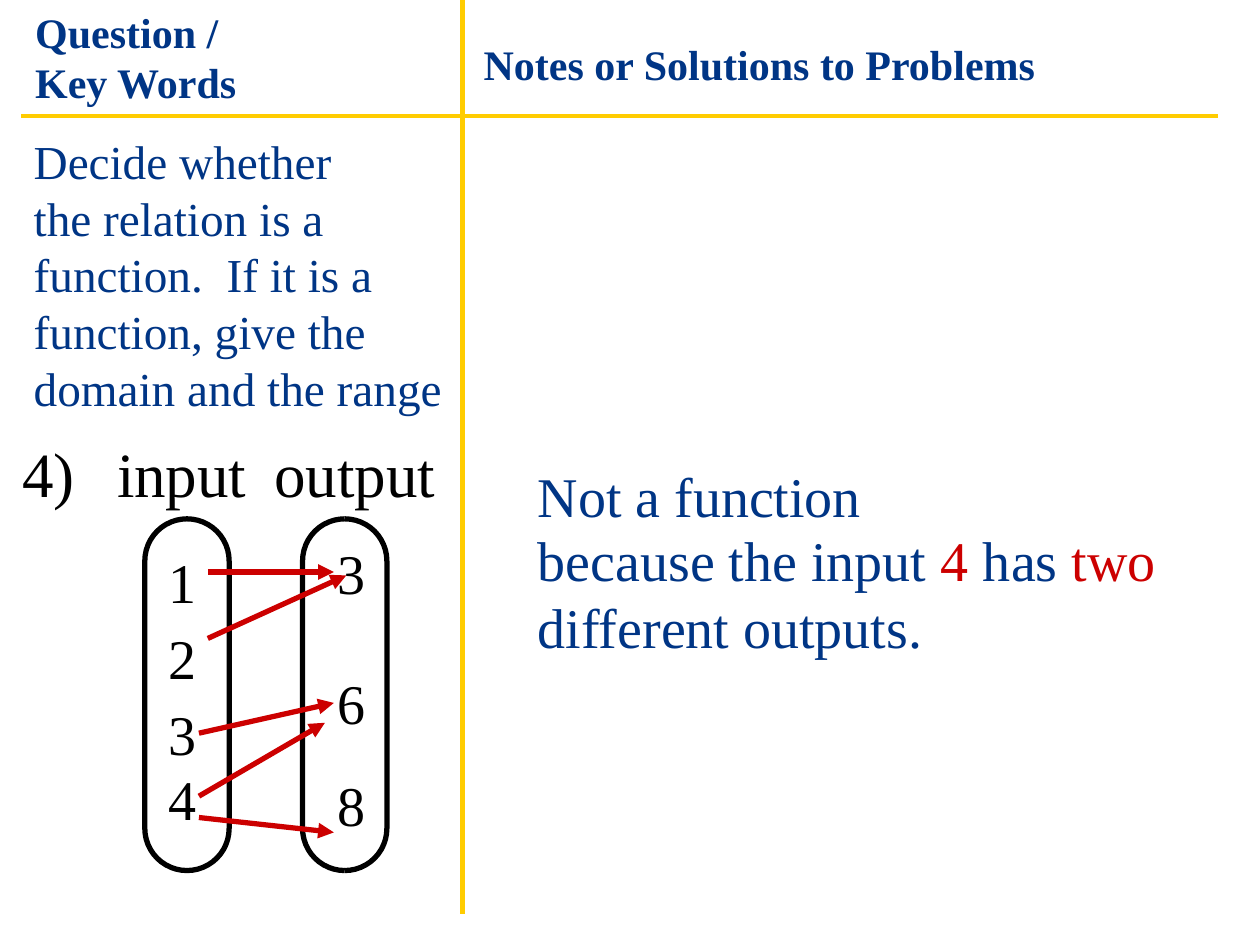
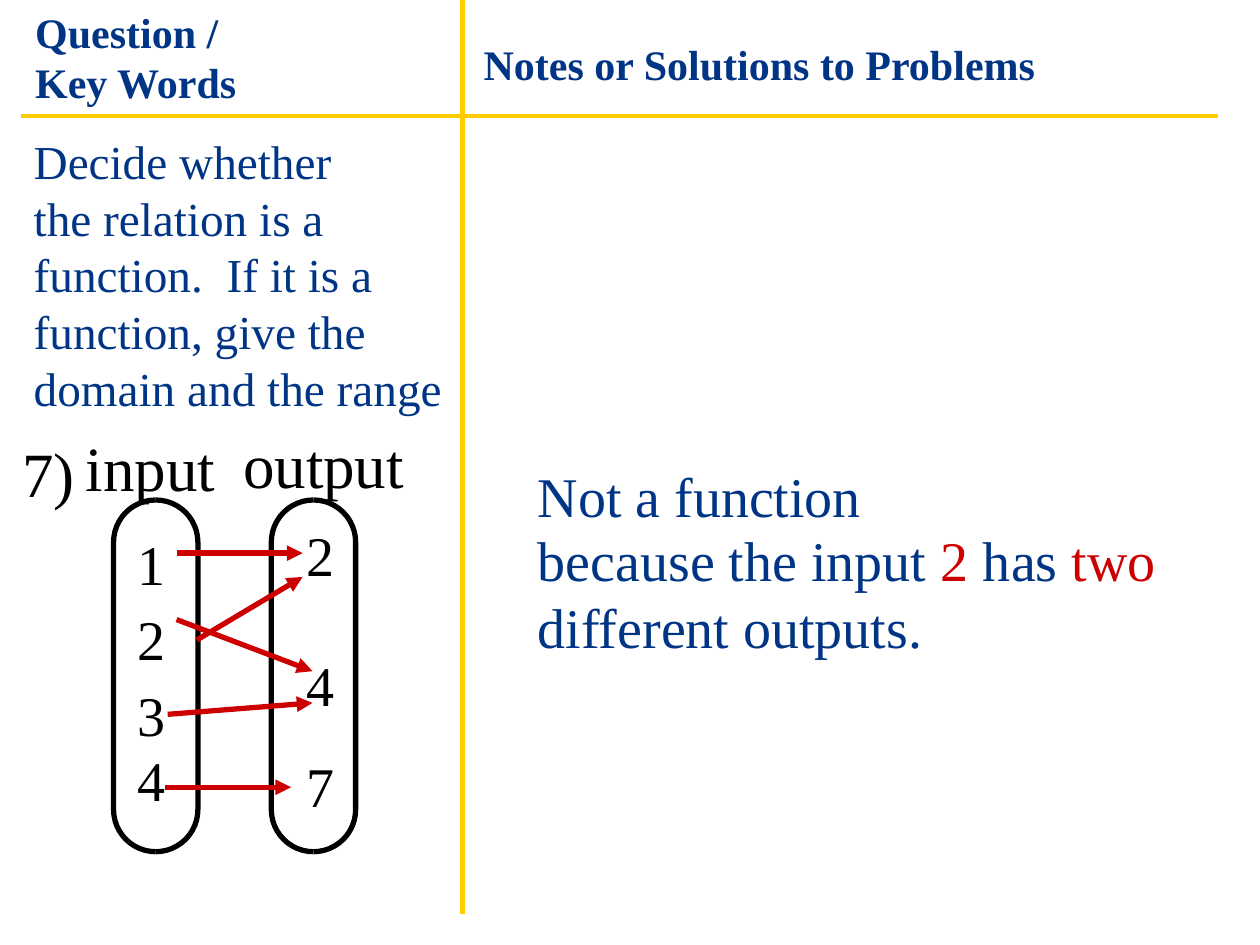
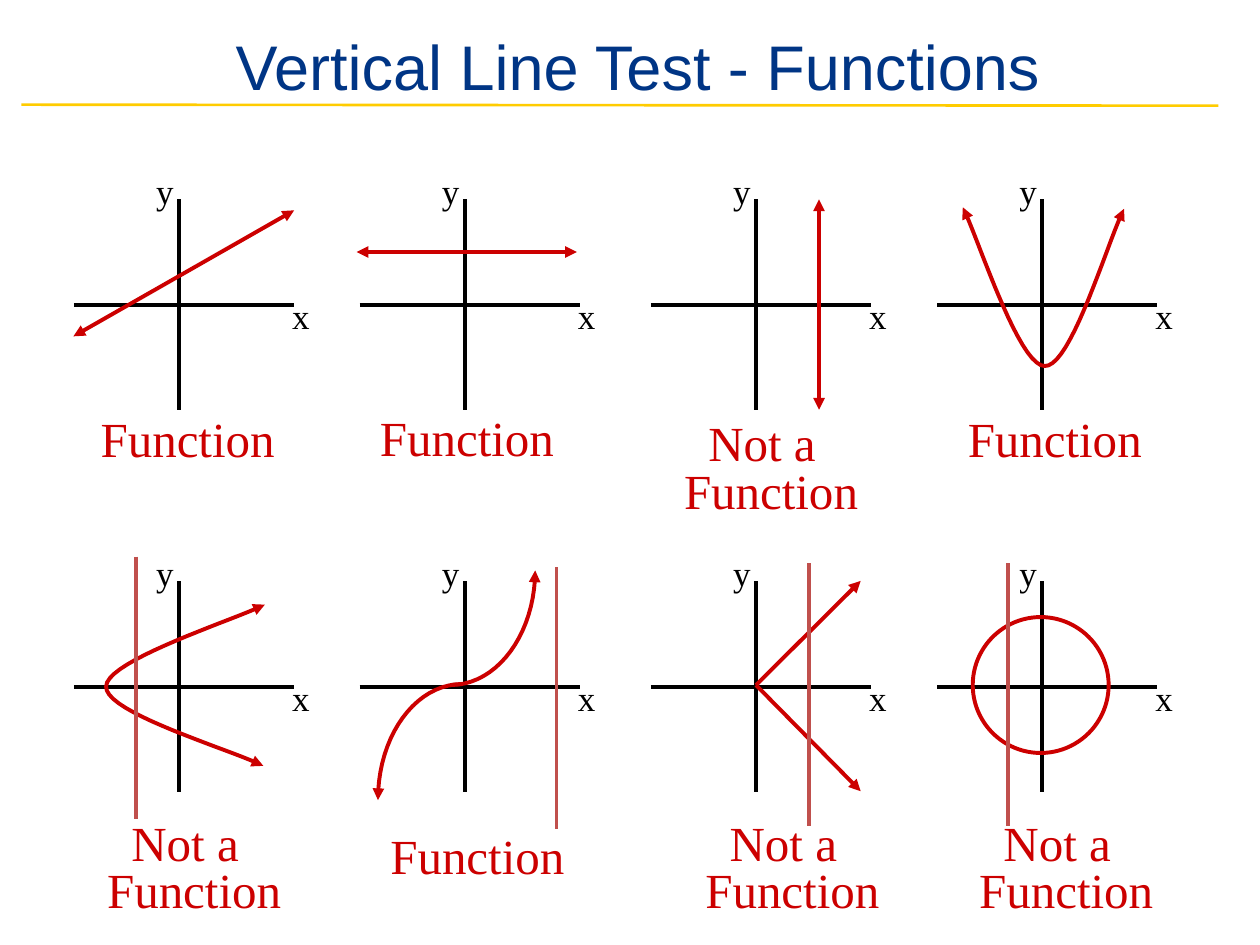
from lxml import etree
from pptx import Presentation
from pptx.dml.color import RGBColor
from pptx.enum.shapes import MSO_CONNECTOR, MSO_SHAPE
from pptx.enum.text import MSO_AUTO_SIZE
from pptx.oxml.ns import qn
from pptx.util import Cm, Pt

STRAIGHT = MSO_CONNECTOR.STRAIGHT
DOUBLE_BRACKET = MSO_SHAPE.DOUBLE_BRACKET
OVAL = MSO_SHAPE.OVAL
GROW = MSO_AUTO_SIZE.SHAPE_TO_FIT_TEXT

COLORS = {
    "navy": "003585",
    "gold": "FFCC00",
    "red": "CC0000",
    "brick": "C0504D",
    "black": "000000",
}
SERIF = "Times New Roman"
STYLES = {
    "heading": {"name": SERIF, "size": Pt(24), "bold": True},
    "question": {"name": SERIF, "size": Pt(27)},
    "label": {"name": SERIF, "size": Pt(36)},
    "answer": {"name": SERIF, "size": Pt(32)},
    "verdict": {"name": SERIF, "size": Pt(28)},
    "axis": {"name": SERIF, "size": Pt(20)},
    "title": {"name": "Arial", "size": Pt(36)},
}
QUESTION = [
    "Decide whether",
    "the relation is a",
    "function.  If it is a",
    "function, give the",
    "domain and the range",
]
INPUT_TOPS = [0.46, 1.98, 3.51, 4.83]
OUTPUT_TOPS = [0.28, 2.9, 4.95]
MAPPINGS = [
    {
        "number": "4)", "corner": (2.92, 10.46), "label_tops": (8.64, 8.64),
        "outputs": "368", "culprit": "4",
        "arrows": [
            (1.27, 1.07, 3.81, 1.07),
            (1.27, 2.41, 4.06, 1.14),
            (1.09, 4.32, 3.81, 3.71),
            (1.09, 5.59, 3.63, 4.11),
            (1.09, 6.02, 3.81, 6.32),
        ],
    },
    {
        "number": "7)", "corner": (2.29, 10.08), "label_tops": (8.51, 8.46),
        "outputs": "247", "culprit": "2",
        "arrows": [
            (1.27, 1.07, 3.81, 1.07),
            (1.27, 2.41, 4.01, 3.45),
            (1.09, 4.32, 4.01, 4.09),
            (1.04, 5.79, 3.58, 5.79),
            (1.68, 2.82, 3.81, 1.55),
        ],
    },
]
GRAPH_COLUMNS = [3.61, 9.37, 15.24, 21.01]
GRAPH_ROWS = [6.14, 13.84]
GRAPHS = [
    {"verdict": (-1.83, 1.98), "function": True,
     "lines": [(-2.13, 0.64, 2.32, -1.9)], "ends": ("head", "tail")},
    {"verdict": (-1.96, 1.96), "function": True,
     "lines": [(-2.18, -1.06, 2.26, -1.06)], "ends": ("head", "tail")},
    {"verdict": (-1.7, 2.29), "function": False,
     "lines": [(1.27, -2.12, 1.27, 2.12)], "ends": ("head", "tail")},
    {"verdict": (-1.75, 1.98), "function": True, "ends": ("head", "tail"),
     "curves": [[(-1.6, -1.96), (-1.32, -1.42), (-0.48, 1.24), (0.05, 1.24),
                 (0.58, 1.27), (1.32, -1.27), (1.65, -1.93)]]},
    {"verdict": (-1.7, 2.64), "function": False, "ends": ("head", "tail"),
     "curves": [[(1.73, -1.65), (1.19, -1.37), (-1.47, -0.53), (-1.47, 0),
                 (-1.5, 0.53), (1.04, 1.27), (1.7, 1.6)]],
     "test_line": (-0.86, -2.62, -0.86, 2.67)},
    {"verdict": (-1.75, 2.67), "function": True, "ends": ("tail",),
     "curves": [[(-0.28, -0.03), (0.66, -0.03), (1.42, -1.07), (1.42, -2.34)],
                [(-0.05, -0.05), (-0.99, -0.05), (-1.75, 0.99), (-1.75, 2.29)]],
     "test_line": (1.85, -2.41, 1.85, 2.87)},
    {"verdict": (-1.27, 2.64), "function": False, "ends": ("tail",),
     "lines": [(0, -0.03, 2.11, -2.13), (0, -0.03, 2.11, 2.11)],
     "test_line": (1.07, -2.49, 1.07, 2.82)},
    {"verdict": (-1.52, 2.64), "function": False,
     "circle": (-1.4, -1.4, 2.74, 2.74),
     "test_line": (-0.69, -2.49, -0.69, 2.82)},
]


def rgb(color):
    return RGBColor.from_string(COLORS[color])


def shift(box, origin):
    return box[0] + origin[0], box[1] + origin[1], *box[2:]


def add_text(slide, box, lines, style, color="black", indent=0, spacing=None):
    shape = slide.shapes.add_textbox(*map(Cm, box))
    frame = shape.text_frame
    frame.word_wrap = False
    frame.auto_size = GROW
    for index, line in enumerate(lines):
        paragraph = frame.add_paragraph() if index else frame.paragraphs[0]
        if spacing:
            paragraph.line_spacing = spacing
        if indent and index == 0:
            paragraph._p.get_or_add_pPr().set("marL", str(Cm(indent)))
        runs = [(line, color)] if isinstance(line, str) else line
        for text, run_color in runs:
            run = paragraph.add_run()
            run.text = text
            for attribute, value in STYLES[style].items():
                setattr(run.font, attribute, value)
            run.font.color.rgb = rgb(run_color)


def style_line(shape, color, width, ends=()):
    shape.line.color.rgb = rgb(color)
    shape.line.width = Pt(width)
    outline = shape.element.spPr.find(qn("a:ln"))
    for end in ends:
        etree.SubElement(outline, qn(f"a:{end}End")).set("type", "triangle")


def add_line(slide, points, color, width, ends=()):
    connector = slide.shapes.add_connector(STRAIGHT, *map(Cm, points))
    style_line(connector, color, width, ends)
    etree.SubElement(connector.element.spPr, qn("a:effectLst"))


def add_outline(slide, preset, box, color, width):
    shape = slide.shapes.add_shape(preset, *map(Cm, box))
    shape.shadow.inherit = False
    shape.fill.background()
    style_line(shape, color, width)
    return shape


def bezier_point(controls, t):
    weights = ((1 - t) ** 3, 3 * t * (1 - t) ** 2, 3 * t * t * (1 - t), t ** 3)
    return tuple(
        sum(weight * point[axis] for weight, point in zip(weights, controls))
        for axis in (0, 1)
    )


def add_curve(slide, controls, origin, ends, steps=20):
    points = [controls[0]]
    for start in range(0, len(controls) - 1, 3):
        segment = controls[start:start + 4]
        points += [bezier_point(segment, step / steps) for step in range(1, steps + 1)]
    vertices = [tuple(map(Cm, shift(point, origin))) for point in points]
    builder = slide.shapes.build_freeform(*vertices[0])
    builder.add_line_segments(vertices[1:], close=False)
    curve = builder.convert_to_shape()
    curve.shadow.inherit = False
    curve.fill.background()
    style_line(curve, "red", 2.25, ends)


def add_notes_layout(slide):
    add_line(slide, (9.32, 18.42, 9.32, 0), "gold", 2.75)
    add_line(slide, (0.43, 2.34, 24.56, 2.34), "gold", 2.75)
    add_text(slide, (0.46, 0, 4.62, 2.29), ["Question /", "Key Words"], "heading", "navy")
    add_text(slide, (9.5, 0.66, 11.66, 1.27), ["Notes or Solutions to Problems"],
             "heading", "navy")
    add_text(slide, (0.43, 2.54, 8.74, 5.97), QUESTION, "question", "navy")


def add_mapping(slide, mapping):
    corner = mapping["corner"]
    add_text(slide, (0.2, 8.64, 1.57, 1.8), [mapping["number"]], "label")
    names = [("input", -0.81, 3.12), ("output", 2.36, 3.76)]
    for (name, left, width), top in zip(names, mapping["label_tops"]):
        add_text(slide, (corner[0] + left, top, width, 1.78), [name], "label")
    columns = [
        (0, 0.23, "1234", INPUT_TOPS),
        (3.18, 3.63, mapping["outputs"], OUTPUT_TOPS),
    ]
    for bracket_left, number_left, numbers, tops in columns:
        box = shift((bracket_left, 0, 1.7, 7.09), corner)
        bracket = add_outline(slide, DOUBLE_BRACKET, box, "black", 3)
        bracket.adjustments[0] = 0.5
        for number, top in zip(numbers, tops):
            add_text(slide, shift((number_left, top, 1.07, 1.6), corner), [number], "answer")
    for x1, y1, x2, y2 in mapping["arrows"]:
        points = (*shift((x1, y1), corner), *shift((x2, y2), corner))
        add_line(slide, points, "red", 3, ("tail",))


def add_answer(slide, culprit):
    add_text(slide, (10.59, 9.17, 7.04, 1.6), ["Not a function"], "answer", "navy")
    reason = [("because the input ", "navy"), (f"{culprit} ", "red"),
              ("has ", "navy"), ("two", "red")]
    add_text(slide, (10.59, 10.46, 12.98, 2.97), [reason, "different outputs."],
             "answer", "navy")


def add_graph(slide, graph, origin):
    def place(line):
        return *shift(line[:2], origin), *shift(line[2:], origin)

    for axis in [(0, -2.12, 0, 2.12), (-2.12, 0, 2.32, 0)]:
        add_line(slide, place(axis), "black", 2.25)
    for name, left, top in [("x", 2.03, -0.32), ("y", -0.71, -2.84)]:
        add_text(slide, shift((left, top, 0.86, 1.09), origin), [name], "axis")
    for line in graph.get("lines", []):
        add_line(slide, place(line), "red", 2.25, graph["ends"])
    for controls in graph.get("curves", []):
        add_curve(slide, controls, origin, graph["ends"])
    if "circle" in graph:
        add_outline(slide, OVAL, shift(graph["circle"], origin), "red", 2.25)
    if "test_line" in graph:
        add_line(slide, place(graph["test_line"]), "brick", 2.25)
    left, top = shift(graph["verdict"], origin)
    if graph["function"]:
        add_text(slide, (left, top, 4.01, 1.45), ["Function"], "verdict", "red")
    else:
        add_text(slide, (left, top, 4.01, 2.16), ["Not a", "Function"], "verdict", "red",
                 indent=0.49, spacing=0.8)


def main():
    presentation = Presentation()
    presentation.slide_width = Cm(25.4)
    presentation.slide_height = Cm(19.05)
    blank = presentation.slide_layouts[6]

    for mapping in MAPPINGS:
        slide = presentation.slides.add_slide(blank)
        add_notes_layout(slide)
        add_mapping(slide, mapping)
        add_answer(slide, mapping["culprit"])

    slide = presentation.slides.add_slide(blank)
    add_text(slide, (4.5, 0.43, 16.94, 1.78), ["Vertical Line Test - Functions"],
             "title", "navy")
    add_line(slide, (0.43, 2.11, 24.56, 2.13), "gold", 1.5)
    origins = [(x, y) for y in GRAPH_ROWS for x in GRAPH_COLUMNS]
    for graph, origin in zip(GRAPHS, origins):
        add_graph(slide, graph, origin)

    presentation.save("out.pptx")


if __name__ == "__main__":
    main()
